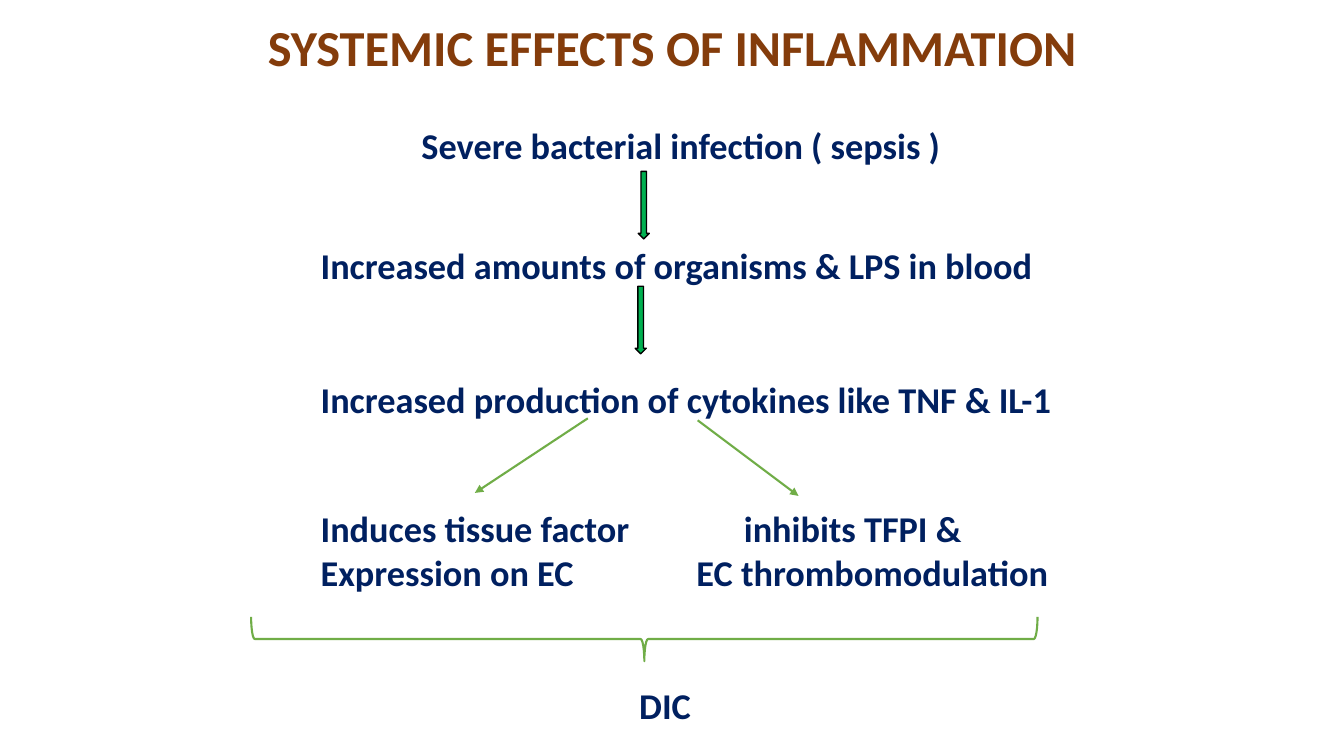
from dataclasses import dataclass

from lxml.etree import SubElement
from pptx import Presentation
from pptx.dml.color import RGBColor
from pptx.enum.shapes import MSO_CONNECTOR, MSO_SHAPE
from pptx.enum.text import MSO_ANCHOR, MSO_AUTO_SIZE, PP_ALIGN
from pptx.oxml.ns import qn
from pptx.util import Inches, Pt


@dataclass(frozen=True)
class Theme:
    font: str = "Calibri"
    brown: str = "843C0B"
    navy: str = "002060"
    green: str = "00B050"
    leaf: str = "70AD47"
    black: str = "000000"
    head: float = 36
    body: float = 25.9


def color(code):
    return RGBColor.from_string(code)


def write(para, text, *, font, size, ink, bold=True, align=PP_ALIGN.LEFT,
          lines=1.0, before=0, left=0):
    """Fill a paragraph with formatted text; left is its indent in inches."""
    run = para.add_run()
    run.text = text
    run.font.name, run.font.size, run.font.bold = font, Pt(size), bold
    run.font.color.rgb = color(ink)
    para.alignment = align
    para.line_spacing = lines
    para.space_before = Pt(before)
    props = para._p.get_or_add_pPr()
    props.set("marL", str(Inches(left)))
    props.set("indent", "0")
    SubElement(props, qn("a:buNone"))


class Board:
    def __init__(self, slide, theme):
        self.slide, self.theme = slide, theme

    def place(self, holder, box, anchor):
        holder.left, holder.top, holder.width, holder.height = map(Inches, box)
        frame = holder.text_frame
        frame.word_wrap = True
        frame.auto_size = MSO_AUTO_SIZE.NONE
        frame.vertical_anchor = anchor
        return frame

    def title(self, text, box):
        frame = self.place(self.slide.shapes.title, box, MSO_ANCHOR.MIDDLE)
        write(frame.paragraphs[0], text, font=self.theme.font,
              size=self.theme.head, ink=self.theme.brown,
              align=PP_ALIGN.CENTER, lines=0.9)

    def rows(self, holder, rows, box):
        frame = self.place(holder, box, MSO_ANCHOR.TOP)
        for i, (before, left, text) in enumerate(rows):
            para = frame.add_paragraph() if i else frame.paragraphs[0]
            write(para, text, font=self.theme.font, size=self.theme.body,
                  ink=self.theme.navy, lines=0.7, before=before, left=left)

    def body(self, rows, box):
        self.rows(self.slide.placeholders[1], rows, box)

    def note(self, rows, box):
        holder = self.slide.shapes.add_textbox(*map(Inches, box))
        self.rows(holder, rows, box)

    def shape(self, kind, box, line, width, fill=None, turn=0):
        item = self.slide.shapes.add_shape(kind, *map(Inches, box))
        item.shadow.inherit = False
        item.rotation = turn
        item.line.color.rgb = color(line)
        item.line.width = Pt(width)
        if fill:
            item.fill.solid()
            item.fill.fore_color.rgb = color(fill)
        else:
            item.fill.background()

    def arrow(self, start, end):
        item = self.slide.shapes.add_connector(
            MSO_CONNECTOR.STRAIGHT, *map(Inches, start + end))
        item.line.color.rgb = color(self.theme.leaf)
        item.line.width = Pt(1.5)
        SubElement(item.line._get_or_add_ln(), qn("a:tailEnd"), type="triangle")
        SubElement(item._element.spPr, qn("a:effectLst"))


def main():
    deck = Presentation()
    deck.slide_width, deck.slide_height = Inches(13.33), Inches(7.5)
    theme = Theme()
    board = Board(deck.slides.add_slide(deck.slide_layouts[1]), theme)

    # Title and steps: space before in points, indent in inches, text
    board.title("SYSTEMIC EFFECTS OF INFLAMMATION", (1.67, 0, 10, 1))
    left = 1.25
    board.body([
        (10, 2.25, "Severe bacterial infection ( sepsis )"),
        (64, left, "Increased amounts of organisms & LPS in blood"),
        (74, left, "Increased production of cytokines like TNF & IL-1"),
        (70.5, left, "Induces tissue factor"),
        (9.5, left, "Expression on EC"),
        (73.5, 4.41, "DIC"),
    ], (1.83, 1.29, 10, 6.01))

    # Second effect, beside the first
    board.note([
        (10, 0.47, "inhibits TFPI &"),
        (9.5, 0, "EC thrombomodulation"),
    ], (6.81, 5.09, 4.2, 0.9))

    # Branches to the two effects
    board.arrow((5.83, 4.15), (4.71, 4.89))
    board.arrow((6.92, 4.17), (7.92, 4.92))

    # Block arrows between steps
    for x, y in ((6.3, 2.84), (6.33, 1.7)):
        board.shape(MSO_SHAPE.DOWN_ARROW, (x, y, 0.11, 0.67),
                    theme.black, 1, fill=theme.green)

    # Brace that joins both effects
    board.shape(MSO_SHAPE.RIGHT_BRACE, (6.17, 2.44, 0.44, 7.8),
                theme.leaf, 1.5, turn=90)

    deck.save("out.pptx")


if __name__ == "__main__":
    main()
